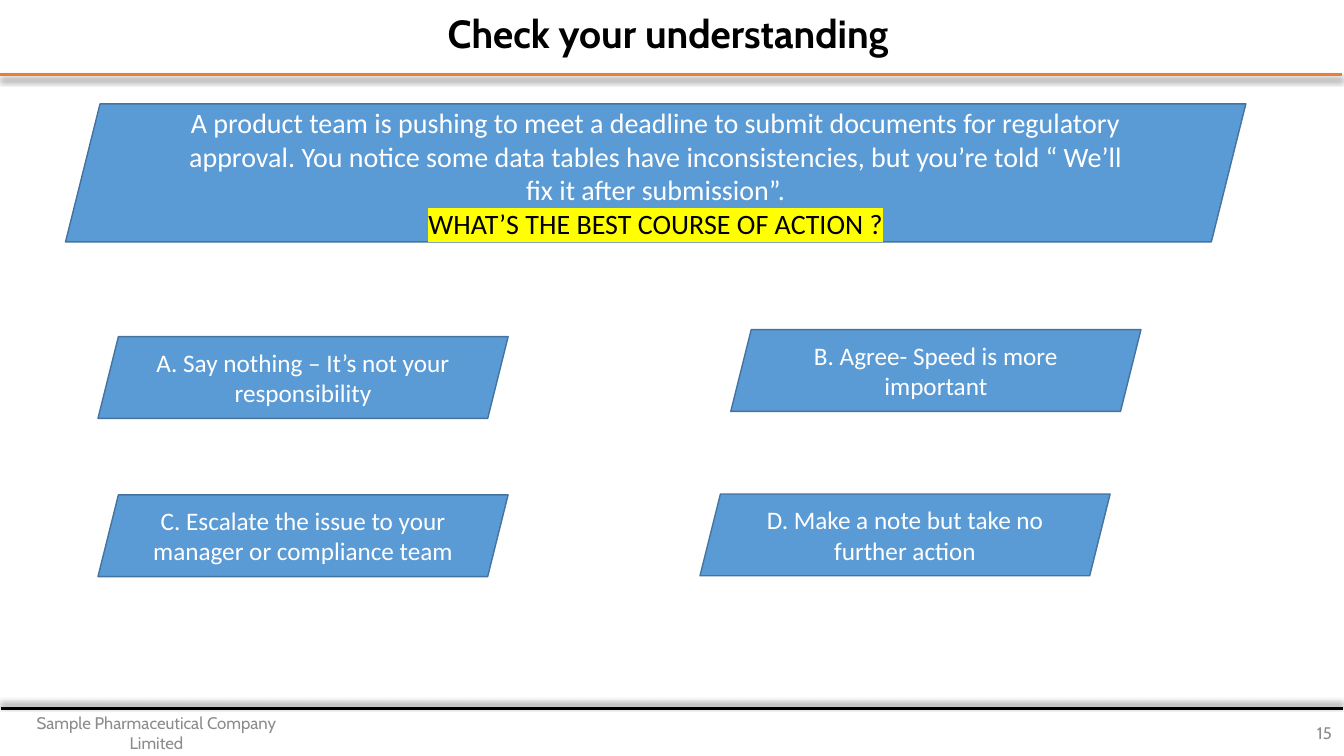
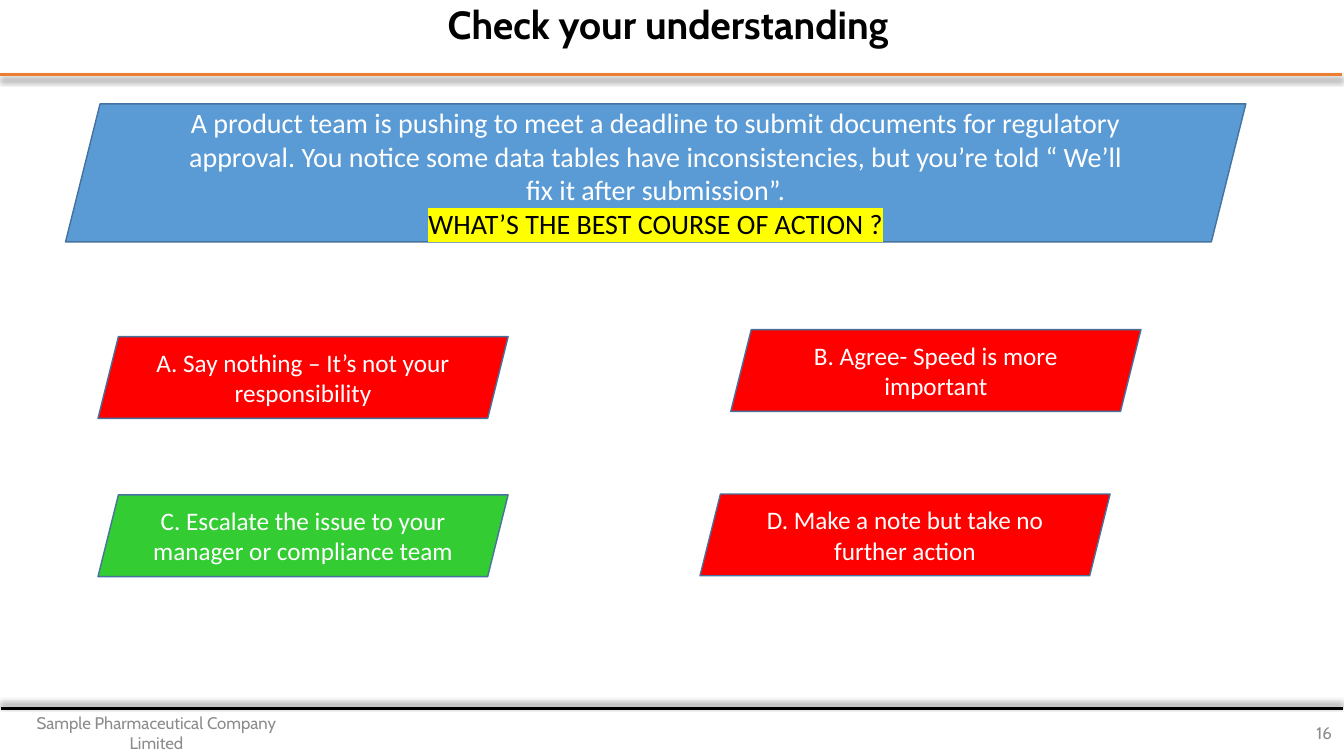
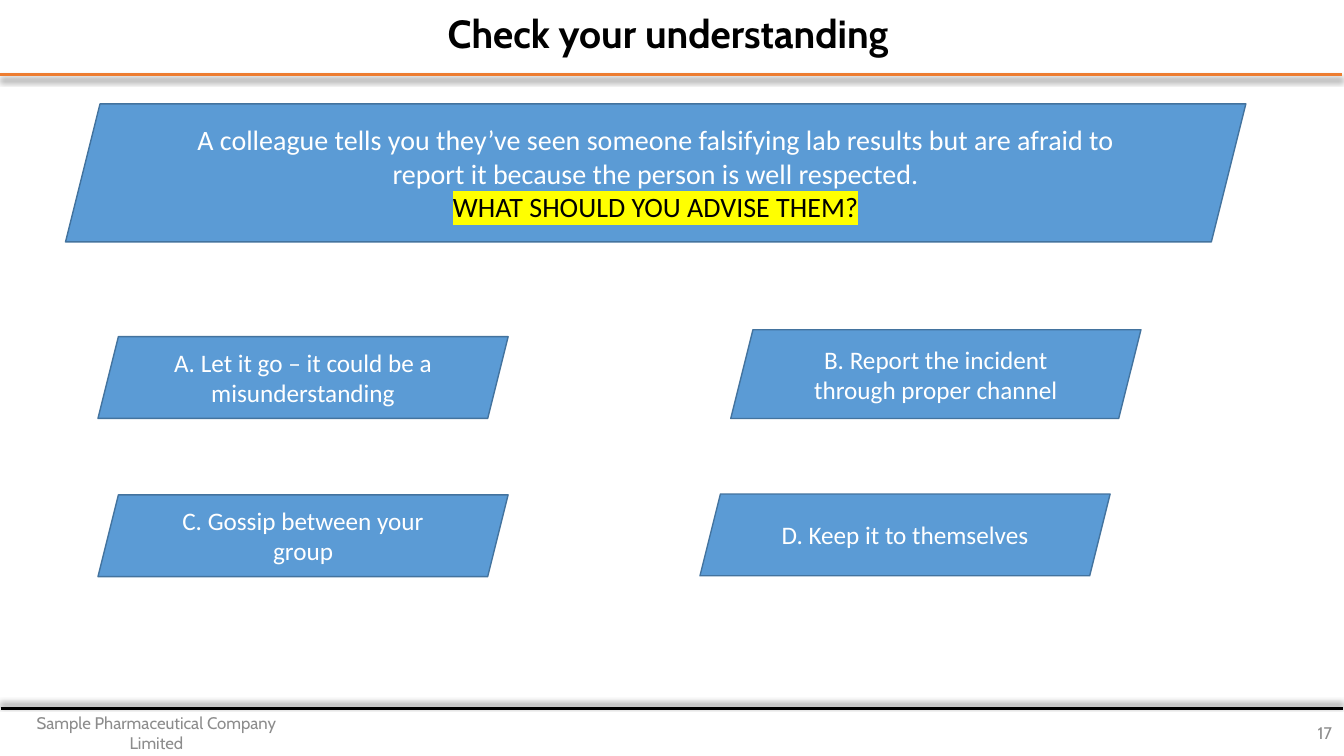
from dataclasses import dataclass

from lxml.etree import SubElement
from pptx import Presentation
from pptx.dml.color import RGBColor
from pptx.enum.shapes import MSO_CONNECTOR, MSO_SHAPE
from pptx.enum.text import MSO_ANCHOR, PP_ALIGN
from pptx.oxml import parse_xml
from pptx.oxml.ns import nsdecls, qn
from pptx.util import Pt


@dataclass(frozen=True)
class Theme:
    heading_font: str = "Cabin"
    body_font: str = "Calibri"
    title_size: float = 28
    question_size: float = 20
    answer_size: float = 18
    footer_size: float = 12
    rule_width: float = 2.25
    outline_width: float = 1
    black: str = "000000"
    white: str = "FFFFFF"
    orange: str = "ED7D31"
    grey: str = "8C8C8C"
    blue: str = "5B9BD5"
    outline: str = "43739E"
    highlight: str = "FFFF00"
    wrong: str = "FF0000"
    right: str = "33CC33"


@dataclass(frozen=True)
class Box:
    left: float
    top: float
    width: float
    height: float

    def inner(self, left, top, width, height):
        """A box placed relative to the corner of this one."""
        return Box(self.left + left, self.top + top, width, height)

    def lengths(self):
        return Pt(self.left), Pt(self.top), Pt(self.width), Pt(self.height)


THEME = Theme()
PAGE = Box(0, 0, 960, 540)
HEADER = Box(0, 0, 958.5, 53.5)
FOOTER = Box(0.5, 506, 958.5, 34)
QUESTION = Box(46.8, 74.2, 843.1, 98.6)
ANSWERS = Box(70, 235.5, 745, 176.5)
ANSWER_SIZE = (293, 58.4)
ANSWER_OFFSETS = {"A": (0, 5), "B": (452, 0), "C": (0, 118), "D": (430, 117.4)}
TITLE = "Check your understanding"
COMPANY = "Sample Pharmaceutical Company Limited"


# Text
def add_run(paragraph, text, font_name, size, color, bold=False, highlight=None):
    run = paragraph.add_run()
    run.text = text
    run.font.name = font_name
    run.font.size = Pt(size)
    run.font.bold = bold
    run.font.color.rgb = RGBColor.from_string(color)
    if highlight:
        marker = parse_xml(f'<a:highlight {nsdecls("a")}><a:srgbClr val="{highlight}"/></a:highlight>')
        run.font._element.find(qn("a:solidFill")).addnext(marker)


def prepare_frame(shape):
    frame = shape.text_frame
    frame.word_wrap = True
    frame.vertical_anchor = MSO_ANCHOR.MIDDLE
    return frame


def add_label(slide, box, text, size, color, align=PP_ALIGN.CENTER, bold=False):
    frame = prepare_frame(slide.shapes.add_textbox(*box.lengths()))
    paragraph = frame.paragraphs[0]
    paragraph.alignment = align
    add_run(paragraph, text, THEME.heading_font, size, color, bold)
    return paragraph


# Lines and panels
def add_rule(slide, left, top, width, color, shadow_angle):
    rule = slide.shapes.add_connector(
        MSO_CONNECTOR.STRAIGHT, Pt(left), Pt(top), Pt(left + width), Pt(top))
    rule.line.color.rgb = RGBColor.from_string(color)
    rule.line.width = Pt(THEME.rule_width)
    effects = SubElement(rule._element.spPr, qn("a:effectLst"))
    shadow = SubElement(effects, qn("a:outerShdw"), blurRad=str(Pt(4)), dist=str(Pt(3)),
                        dir=str(shadow_angle * 60000), rotWithShape="0")
    shade = SubElement(shadow, qn("a:srgbClr"), val=THEME.black)
    SubElement(shade, qn("a:alpha"), val="40000")


def add_panel(slide, box, fill, size, lines):
    """A slanted panel; each line is a text and its highlight colour or None."""
    panel = slide.shapes.add_shape(MSO_SHAPE.PARALLELOGRAM, *box.lengths())
    panel.shadow.inherit = False
    panel.fill.solid()
    panel.fill.fore_color.rgb = RGBColor.from_string(fill)
    panel.line.color.rgb = RGBColor.from_string(THEME.outline)
    panel.line.width = Pt(THEME.outline_width)
    frame = prepare_frame(panel)
    for index, (text, highlight) in enumerate(lines):
        paragraph = frame.add_paragraph() if index else frame.paragraphs[0]
        paragraph.alignment = PP_ALIGN.CENTER
        color = THEME.black if highlight else THEME.white
        add_run(paragraph, text, THEME.body_font, size, color, highlight=highlight)


# Regions
def add_header(slide, box, title_top):
    add_rule(slide, box.left, box.top + box.height, box.width, THEME.orange, 90)
    title = add_label(slide, box.inner(288.5, title_top, 377.3, 41), TITLE,
                      THEME.title_size, THEME.black, bold=True)
    title.line_spacing = 0.9


def add_footer(slide, box, number):
    add_rule(slide, box.left, box.top, box.width, THEME.black, 270)
    add_label(slide, box.inner(0, 3, 222.5, 28.8), COMPANY, THEME.footer_size, THEME.grey)
    add_label(slide, box.inner(742, 3, 216, 28.8), str(number), THEME.footer_size,
              THEME.grey, PP_ALIGN.RIGHT)


def add_question(slide, box, scenario, prompt):
    add_panel(slide, box, THEME.blue, THEME.question_size,
              [(scenario, None), (prompt, THEME.highlight)])


def add_answers(slide, box, answers, correct, extra_heights):
    width, height = ANSWER_SIZE
    for letter, answer in answers.items():
        fill = THEME.blue
        if correct:
            fill = THEME.right if letter == correct else THEME.wrong
        answer_box = box.inner(*ANSWER_OFFSETS[letter], width,
                               height + extra_heights.get(letter, 0))
        add_panel(slide, answer_box, fill, THEME.answer_size, [(f"{letter}. {answer}", None)])


def add_quiz_slide(deck, number, quiz, correct=None, title_top=5, extra_heights=None):
    slide = deck.slides.add_slide(deck.slide_layouts[6])
    add_header(slide, HEADER, title_top)
    add_footer(slide, FOOTER, number)
    add_question(slide, QUESTION, quiz["scenario"], quiz["prompt"])
    add_answers(slide, ANSWERS, quiz["answers"], correct, extra_heights or {})


# Content
DATA_TABLES = {
    "scenario": "A product team is pushing to meet a deadline to submit documents for "
                "regulatory approval. You notice some data tables have inconsistencies, "
                "but you’re told “ We’ll fix it after submission”.",
    "prompt": "WHAT’S THE BEST COURSE OF ACTION ?",
    "answers": {
        "A": "Say nothing – It’s not your responsibility",
        "C": "Escalate the issue to your manager or compliance team",
        "D": "Make a note but take no further action",
        "B": "Agree- Speed is more important",
    },
}
LAB_RESULTS = {
    "scenario": "A colleague tells you they’ve seen someone falsifying lab results but are "
                "afraid to report it because the person is well respected.",
    "prompt": "WHAT SHOULD YOU ADVISE THEM?",
    "answers": {
        "A": "Let it go – it could be a misunderstanding",
        "C": "Gossip between your group",
        "D": "Keep it to themselves",
        "B": "Report the incident through proper channel",
    },
}


def main():
    deck = Presentation()
    deck.slide_width, deck.slide_height = Pt(PAGE.width), Pt(PAGE.height)
    add_quiz_slide(deck, 15, DATA_TABLES)
    add_quiz_slide(deck, 16, DATA_TABLES, correct="C", title_top=-1.4)
    add_quiz_slide(deck, 17, LAB_RESULTS, extra_heights={"B": 5})
    deck.save("out.pptx")


if __name__ == "__main__":
    main()
